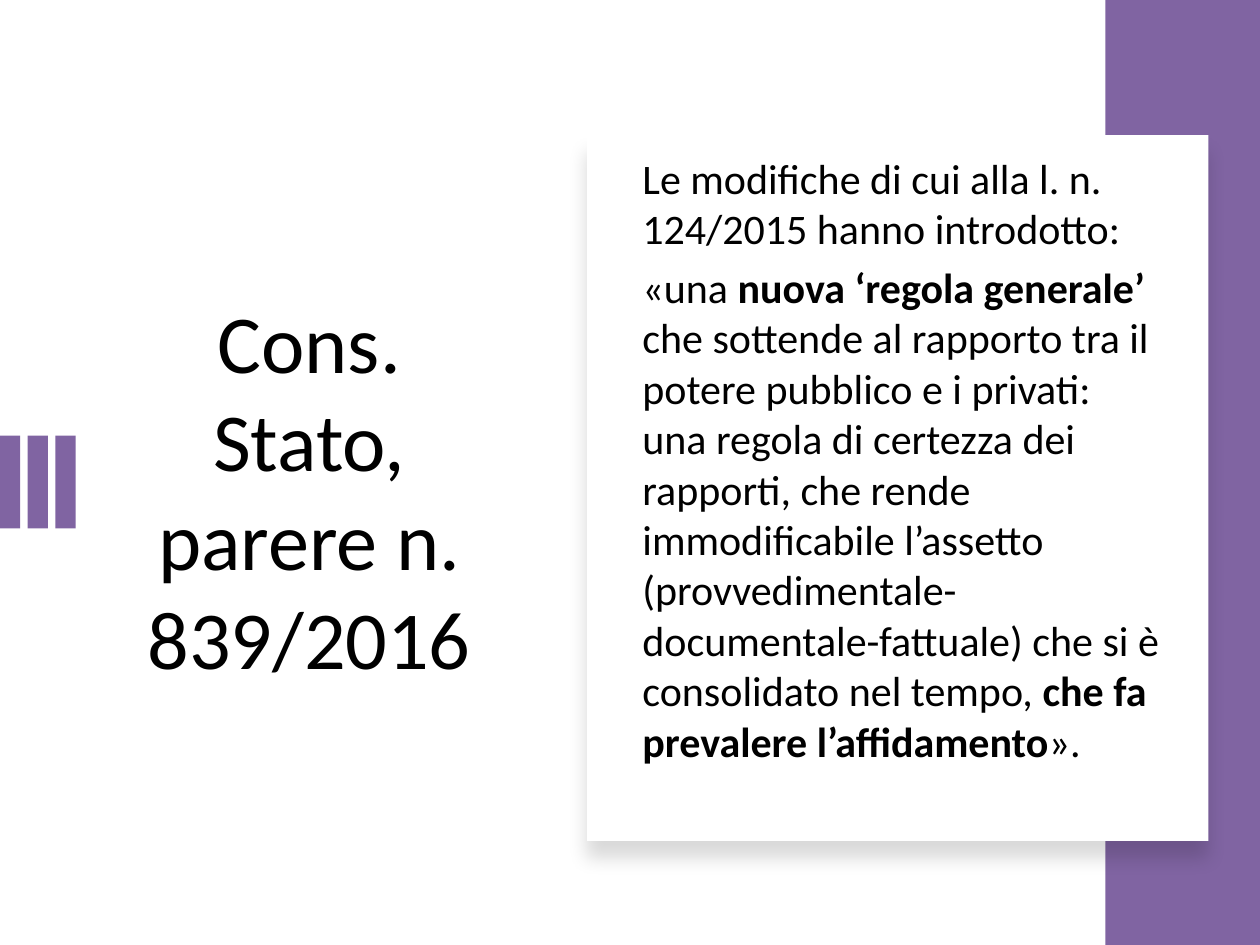
import pptx
import pptx.dml.color
import pptx.enum.shapes
import pptx.enum.text
import pptx.oxml
import pptx.oxml.ns
import pptx.util

Pt = pptx.util.Pt
PURPLE = pptx.dml.color.RGBColor(0x80, 0x64, 0xA2)
WHITE = pptx.dml.color.RGBColor(0xFF, 0xFF, 0xFF)
BLACK = pptx.dml.color.RGBColor(0x00, 0x00, 0x00)

SOFT_SHADOW = (
    f'<a:effectLst {pptx.oxml.ns.nsdecls("a")}>'
    f'<a:outerShdw blurRad="{Pt(11)}" dist="{Pt(10)}" dir="5400000" algn="t" rotWithShape="0">'
    '<a:srgbClr val="000000"><a:alpha val="15000"/></a:srgbClr>'
    '</a:outerShdw></a:effectLst>'
)


class SlideBuilder:
    font = "Calibri"

    def __init__(self, slide):
        self.slide = slide

    def rectangle(self, left, top, width, height, fill, shadow=False):
        rect = self.slide.shapes.add_shape(
            pptx.enum.shapes.MSO_SHAPE.RECTANGLE,
            Pt(left), Pt(top), Pt(width), Pt(height))
        rect.fill.solid()
        rect.fill.fore_color.rgb = fill
        rect.line.fill.background()
        rect.shadow.inherit = False
        if shadow:
            properties = rect._element.spPr
            properties.remove(properties.find(pptx.oxml.ns.qn("a:effectLst")))
            properties.append(pptx.oxml.parse_xml(SOFT_SHADOW))

    def text(self, left, top, width, height, paragraphs, size, align, anchor, gap=0):
        """Place paragraphs, each a list of (wording, bold) pairs."""
        box = self.slide.shapes.add_textbox(Pt(left), Pt(top), Pt(width), Pt(height))
        frame = box.text_frame
        frame.word_wrap = True
        frame.vertical_anchor = anchor
        frame.margin_top = frame.margin_bottom = 0
        frame.margin_left = frame.margin_right = Pt(7.2)
        for index, pieces in enumerate(paragraphs):
            paragraph = frame.add_paragraph() if index else frame.paragraphs[0]
            paragraph.alignment = align
            paragraph.space_before = Pt(gap if index else 0)
            for wording, bold in pieces:
                run = paragraph.add_run()
                run.text = wording
                run.font.name = self.font
                run.font.size = Pt(size)
                run.font.bold = bold
                run.font.color.rgb = BLACK


def main():
    deck = pptx.Presentation()
    deck.slide_width, deck.slide_height = Pt(720), Pt(540)
    builder = SlideBuilder(deck.slides.add_slide(deck.slide_layouts[6]))
    align = pptx.enum.text.PP_ALIGN
    anchor = pptx.enum.text.MSO_ANCHOR

    for stripe in range(3):
        builder.rectangle(stripe * 15.8, 249, 11.6, 53, PURPLE)
    builder.rectangle(631.7, 0, 88.3, 540, PURPLE)
    builder.rectangle(335.6, 77.3, 355, 403.2, WHITE, shadow=True)

    builder.text(61.9, 106.5, 229.7, 345, [[("Cons. Stato, parere n. 839/2016", False)]],
                 47, align.CENTER, anchor.MIDDLE)

    introduction = [("Le modifiche di cui alla l. n. 124/2015 hanno introdotto:", False)]
    quotation = [
        ("«una ", False),
        ("nuova ‘regola generale’ ", True),
        ("che sottende al rapporto tra il potere pubblico e i privati: una regola di "
         "certezza dei rapporti, che rende immodificabile l’assetto "
         "(provvedimentale-documentale-fattuale) che si è consolidato nel tempo, ", False),
        ("che fa prevalere l’affidamento", True),
        ("».", False),
    ]
    builder.text(360, 87, 311, 362, [introduction, quotation],
                 24, align.LEFT, anchor.TOP, gap=4.8)

    deck.save("out.pptx")


if __name__ == "__main__":
    main()
